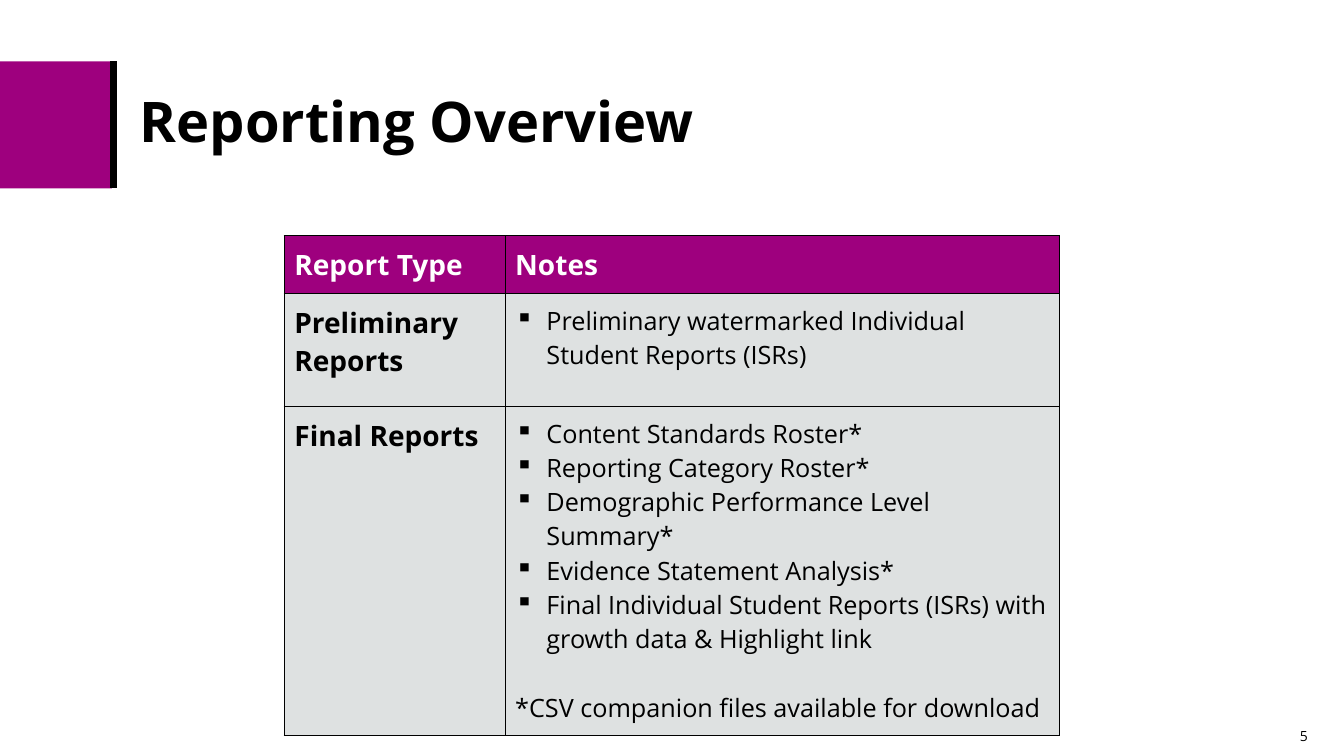
from pptx import Presentation, util as u
from pptx.dml.color import RGBColor
from pptx.enum import shapes, text
from pptx.oxml.ns import qn
from lxml import etree

MAGENTA = RGBColor(0x9E, 0x00, 0x7E)
GRAY = RGBColor(0xDE, 0xE1, 0xE1)
BLACK = RGBColor(0, 0, 0)
WHITE = RGBColor(0xFF, 0xFF, 0xFF)

COLUMN_WIDTHS = [2.19, 5.5]
ROW_HEIGHTS = [0.57, 1.12, 3.27]
HEADINGS = ["Report Type", "Notes"]
REPORTS = [
    ("Preliminary Reports",
     ["Preliminary\u00a0watermarked Individual Student Reports (ISRs)".replace("\u00a0", " ")],
     None),
    ("Final Reports",
     ["Content Standards Roster*",
      "Reporting Category Roster*",
      "Demographic Performance Level Summary*",
      "Evidence Statement Analysis*",
      "Final Individual Student Reports (ISRs) with growth data & Highlight link"],
     "*CSV companion files available for download"),
]
REPORTS[0][1][0] = "Preliminary watermarked Individual Student Reports (ISRs)"


class SlideBuilder:
    font_name = "Open Sans"

    def __init__(self, slide):
        self.slide = slide

    def style(self, paragraph, size, color=BLACK, bold=False):
        font = paragraph.font
        font.name, font.size, font.bold = self.font_name, u.Pt(size), bold
        font.color.rgb = color

    def block(self, left, top, width, height, color):
        shape = self.slide.shapes.add_shape(
            shapes.MSO_SHAPE.RECTANGLE, *map(u.Inches, (left, top, width, height)))
        shape.shadow.inherit = False
        shape.fill.solid()
        shape.fill.fore_color.rgb = color
        shape.line.fill.background()

    def line(self, x1, y1, x2, y2, width):
        connector = self.slide.shapes.add_connector(
            shapes.MSO_CONNECTOR.STRAIGHT, *map(u.Inches, (x1, y1, x2, y2)))
        connector.line.color.rgb = BLACK
        connector.line.width = u.Pt(width)
        etree.SubElement(connector._element.spPr, qn("a:effectLst"))

    def label(self, left, top, width, height, content, size, bold=False,
              alignment=text.PP_ALIGN.LEFT, line_spacing=1.0):
        box = self.slide.shapes.add_textbox(*map(u.Inches, (left, top, width, height)))
        frame = box.text_frame
        frame.word_wrap = True
        frame.vertical_anchor = text.MSO_ANCHOR.MIDDLE
        paragraph = frame.paragraphs[0]
        paragraph.text = content
        paragraph.alignment = alignment
        paragraph.line_spacing = line_spacing
        self.style(paragraph, size, bold=bold)

    def table(self, left, top, column_widths, row_heights):
        frame = self.slide.shapes.add_table(
            len(row_heights), len(column_widths), u.Inches(left), u.Inches(top),
            u.Inches(sum(column_widths)), u.Inches(sum(row_heights)))
        for column, width in zip(frame.table.columns, column_widths):
            column.width = u.Inches(width)
        for row, height in zip(frame.table.rows, row_heights):
            row.height = u.Inches(height)
        return frame.table

    def cell(self, cell, lines, size, fill, color=BLACK, bold=False):
        """Fill a bordered table cell with one paragraph per line."""
        cell.margin_left = cell.margin_right = u.Inches(0.1)
        cell.margin_top = cell.margin_bottom = u.Inches(0.1)
        properties = cell._tc.get_or_add_tcPr()
        for side in ("a:lnL", "a:lnR", "a:lnT", "a:lnB"):
            border = etree.SubElement(properties, qn(side), w=str(u.Pt(1)))
            solid = etree.SubElement(border, qn("a:solidFill"))
            etree.SubElement(solid, qn("a:srgbClr"), val=str(BLACK))
        cell.fill.solid()
        cell.fill.fore_color.rgb = fill
        cell.text = "\n".join(lines)
        for paragraph in cell.text_frame.paragraphs:
            self.style(paragraph, size, color, bold)

    def bullet(self, paragraph):
        properties = paragraph._p.get_or_add_pPr()
        indent = u.Inches(0.31)
        properties.set("marL", str(indent))
        properties.set("indent", str(-indent))
        mark = etree.Element(qn("a:buChar"), char="▪")
        properties.find(qn("a:defRPr")).addprevious(mark)


def main():
    presentation = Presentation()
    presentation.slide_width = u.Inches(13.33)
    presentation.slide_height = u.Inches(7.5)
    builder = SlideBuilder(presentation.slides.add_slide(presentation.slide_layouts[6]))

    builder.block(0, 0.61, 1.11, 1.26, MAGENTA)
    builder.line(1.13, 0.61, 1.13, 1.87, 5)
    builder.label(1.29, 0.62, 10.9, 1.22, "Reporting Overview", 40, bold=True,
                  line_spacing=0.9)
    builder.label(10.07, 7.1, 3, 0.4, "5", 10, alignment=text.PP_ALIGN.RIGHT)

    table = builder.table(2.82, 2.34, COLUMN_WIDTHS, ROW_HEIGHTS)
    for column, heading in enumerate(HEADINGS):
        builder.cell(table.cell(0, column), [heading], 20, MAGENTA, WHITE, bold=True)
    for row, (report, notes, footnote) in enumerate(REPORTS, start=1):
        builder.cell(table.cell(row, 0), [report], 20, GRAY, bold=True)
        notes_cell = table.cell(row, 1)
        builder.cell(notes_cell, notes + ([footnote] if footnote else []), 18, GRAY)
        paragraphs = notes_cell.text_frame.paragraphs
        for paragraph in paragraphs[:len(notes)]:
            builder.bullet(paragraph)
        if footnote:
            paragraphs[-1].space_before = u.Pt(24.5)

    presentation.save("out.pptx")


if __name__ == "__main__":
    main()
